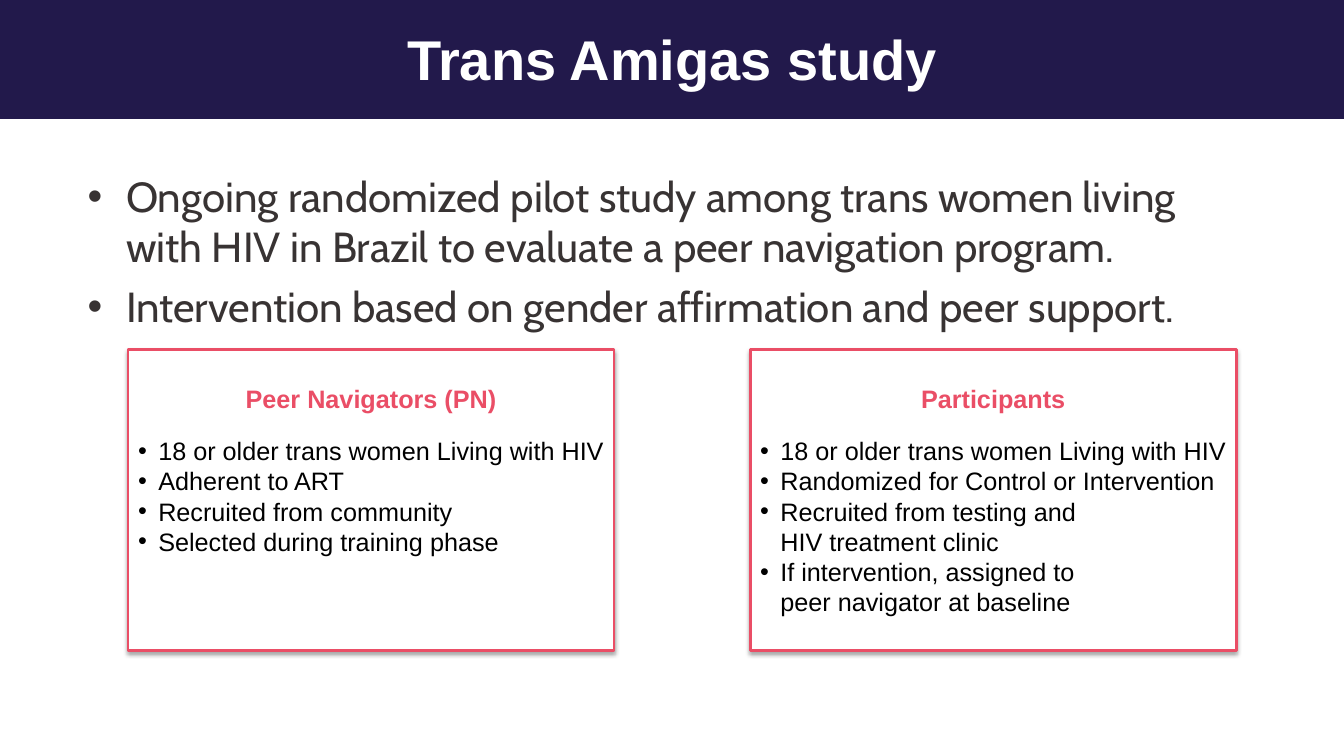
"""Build the Trans Amigas study slide."""
from lxml.etree import SubElement
from pptx import Presentation
from pptx.dml.color import RGBColor
from pptx.enum.shapes import MSO_SHAPE
from pptx.enum.text import MSO_ANCHOR, PP_ALIGN
from pptx.oxml.ns import qn
from pptx.util import Inches, Pt

NAVY = RGBColor(0x22, 0x19, 0x4B)
CORAL = RGBColor(0xEA, 0x4E, 0x66)
CHARCOAL = RGBColor(0x38, 0x33, 0x33)
BLACK = RGBColor(0, 0, 0)
WHITE = RGBColor(0xFF, 0xFF, 0xFF)

SUMMARY = [
    "Ongoing randomized pilot study among trans women living with HIV in Brazil "
    "to evaluate a peer navigation program.",
    "Intervention based on gender affirmation and peer support.",
]
GROUPS = [
    ("Peer Navigators (PN)", [
        "18 or older trans women Living with HIV",
        "Adherent to ART",
        "Recruited from community",
        "Selected during training phase",
    ]),
    ("Participants", [
        "18 or older trans women Living with HIV",
        "Randomized for Control or Intervention",
        "Recruited from testing and \nHIV treatment clinic",
        "If intervention, assigned to \npeer navigator at baseline",
    ]),
]
CARD_LEFT, CARD_TOP, CARD_WIDTH, CARD_HEIGHT = 1.27, 3.47, 4.82, 2.98
CARD_PITCH = 6.17


def place(shape, left, top, width, height):
    """Set the position and size of a shape in inches."""
    shape.left, shape.top = Inches(left), Inches(top)
    shape.width, shape.height = Inches(width), Inches(height)


def add_bullet(paragraph, indent):
    """Give a paragraph a round bullet with a hanging indent in inches."""
    properties = paragraph._p.get_or_add_pPr()
    properties.set("marL", str(Inches(indent)))
    properties.set("indent", str(-Inches(indent)))
    SubElement(properties, qn("a:buFont"), typeface="Arial")
    SubElement(properties, qn("a:buChar"), char="•")


def write(frame, lines, size, color, font="Arial", bold=False,
          align=PP_ALIGN.LEFT, anchor=MSO_ANCHOR.TOP, indent=None, gap=0):
    """Fill a text frame with one formatted paragraph per line."""
    frame.word_wrap = True
    frame.vertical_anchor = anchor
    frame.margin_left = frame.margin_right = Inches(0.05)
    frame.margin_top = frame.margin_bottom = Inches(0.05)
    for index, line in enumerate(lines):
        paragraph = frame.add_paragraph() if index else frame.paragraphs[0]
        paragraph.text = line
        paragraph.alignment = align
        paragraph.space_before = Pt(gap if index else 0)
        if indent:
            add_bullet(paragraph, indent)
        for run in paragraph.runs:
            run.font.name, run.font.size = font, Pt(size)
            run.font.bold, run.font.color.rgb = bold, color


def add_text(slide, left, top, width, height, lines, **text_format):
    """Add a text box holding formatted lines."""
    box = slide.shapes.add_textbox(
        Inches(left), Inches(top), Inches(width), Inches(height))
    write(box.text_frame, lines, **text_format)


def add_rectangle(slide, left, top, width, height, fill):
    """Add a filled rectangle without outline or shadow."""
    rectangle = slide.shapes.add_shape(
        MSO_SHAPE.RECTANGLE,
        Inches(left), Inches(top), Inches(width), Inches(height))
    rectangle.shadow.inherit = False
    rectangle.fill.solid()
    rectangle.fill.fore_color.rgb = fill
    rectangle.line.fill.background()
    return rectangle


def add_drop_shadow(shape):
    """Add a soft black shadow below a shape."""
    effects = shape.element.spPr.find(qn("a:effectLst"))
    shadow = SubElement(effects, qn("a:outerShdw"), blurRad=str(Pt(3)),
                        dist=str(Pt(1.8)), dir="5400000", rotWithShape="0")
    shade = SubElement(shadow, qn("a:srgbClr"), val="000000")
    SubElement(shade, qn("a:alpha"), val="35000")


def add_header(slide, heading):
    """Put the title in white on a navy band."""
    title = slide.shapes.title
    place(title, 0.82, -0.05, 11.69, 1.25)
    write(title.text_frame, [heading], size=40, color=WHITE, bold=True,
          align=PP_ALIGN.CENTER, anchor=MSO_ANCHOR.MIDDLE)
    band = add_rectangle(slide, 0, 0, 13.33, 1.18, NAVY)
    title.element.addprevious(band.element)


def add_group_card(slide, left, heading, criteria):
    """Add an outlined card with a heading and bulleted criteria."""
    card = add_rectangle(slide, left, CARD_TOP, CARD_WIDTH, CARD_HEIGHT, WHITE)
    card.line.color.rgb = CORAL
    card.line.width = Pt(2)
    add_drop_shadow(card)
    add_text(slide, left, CARD_TOP + 0.28, CARD_WIDTH, 0.41, [heading],
             size=18, color=CORAL, bold=True, align=PP_ALIGN.CENTER)
    add_text(slide, left + 0.05, CARD_TOP + 0.8, CARD_WIDTH, 1.93, criteria,
             size=18, color=BLACK, indent=0.2)


def main():
    """Build and save the slide."""
    presentation = Presentation()
    presentation.slide_width = Inches(13.33)
    presentation.slide_height = Inches(7.5)
    slide = presentation.slides.add_slide(presentation.slide_layouts[5])
    add_header(slide, "Trans Amigas study")
    add_text(slide, 0.82, 1.64, 11.69, 1.75, SUMMARY, size=30, color=CHARCOAL,
             font="Cabin", indent=0.38, gap=7)
    for column, (heading, criteria) in enumerate(GROUPS):
        add_group_card(slide, CARD_LEFT + column * CARD_PITCH, heading, criteria)
    presentation.save("out.pptx")


if __name__ == "__main__":
    main()
